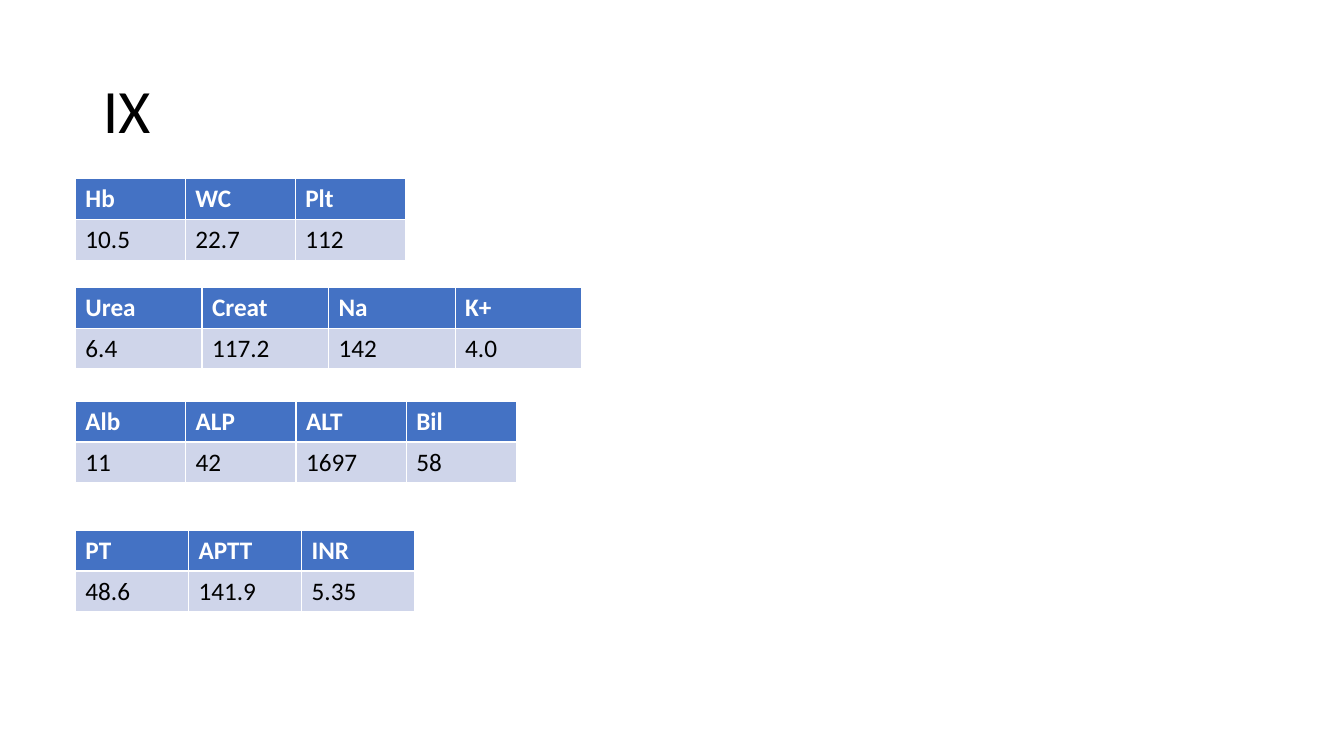
from dataclasses import dataclass

from pptx import Presentation
from pptx.dml.color import RGBColor
from pptx.enum.text import MSO_ANCHOR, PP_ALIGN
from pptx.slide import Slide
from pptx.util import Cm, Pt

COLORS = {"header": "4472C4", "body": "CFD5EA", "light": "FFFFFF", "dark": "000000"}
FONT = "Calibri"
TABLE_LEFT = 1.9
ROW_HEIGHT = 1.03


@dataclass
class LabPanel:
    top: float
    col_width: float
    results: dict[str, str]


PANELS = [
    LabPanel(10.11, 2.78, {"Alb": "11", "ALP": "42", "ALT": "1697", "Bil": "58"}),
    LabPanel(7.24, 3.19, {"Urea": "6.4", "Creat": "117.2", "Na": "142", "K+": "4.0"}),
    LabPanel(13.36, 2.85, {"PT": "48.6", "APTT": "141.9", "INR": "5.35"}),
    LabPanel(4.5, 2.77, {"Hb": "10.5", "WC": "22.7", "Plt": "112"}),
]


def add_text(p, text: str, size: int, color: str, bold: bool = False) -> None:
    r = p.add_run()
    r.text = text
    for name, value in {"name": FONT, "size": Pt(size), "bold": bold}.items():
        setattr(r.font, name, value)
    r.font.color.rgb = RGBColor.from_string(COLORS[color])


def add_title(s: Slide, text: str) -> None:
    sp = s.shapes.title
    box = {"left": 2.34, "top": 1.02, "width": 29.21, "height": 3.68}
    for name, value in box.items():
        setattr(sp, name, Cm(value))
    tf = sp.text_frame
    tf.vertical_anchor = MSO_ANCHOR.MIDDLE
    p = tf.paragraphs[0]
    for name, value in {"alignment": PP_ALIGN.LEFT, "line_spacing": 0.9}.items():
        setattr(p, name, value)
    add_text(p, text, 44, "dark")


def add_panel(s: Slide, panel: LabPanel) -> None:
    n = len(panel.results)
    table = s.shapes.add_table(
        2, n, Cm(TABLE_LEFT), Cm(panel.top), Cm(panel.col_width * n), Cm(ROW_HEIGHT * 2)
    ).table
    rows = [
        (panel.results.keys(), "header", "light", True),
        (panel.results.values(), "body", "dark", False),
    ]
    for i, (texts, fill, color, bold) in enumerate(rows):
        for j, text in enumerate(texts):
            cell = table.cell(i, j)
            cell.fill.solid()
            cell.fill.fore_color.rgb = RGBColor.from_string(COLORS[fill])
            add_text(cell.text_frame.paragraphs[0], text, 18, color, bold)


def main() -> None:
    prs = Presentation()
    prs.slide_width, prs.slide_height = Cm(33.87), Cm(19.05)
    s = prs.slides.add_slide(prs.slide_layouts[5])
    add_title(s, "IX")
    for panel in PANELS:
        add_panel(s, panel)
    prs.save("out.pptx")


if __name__ == "__main__":
    main()
